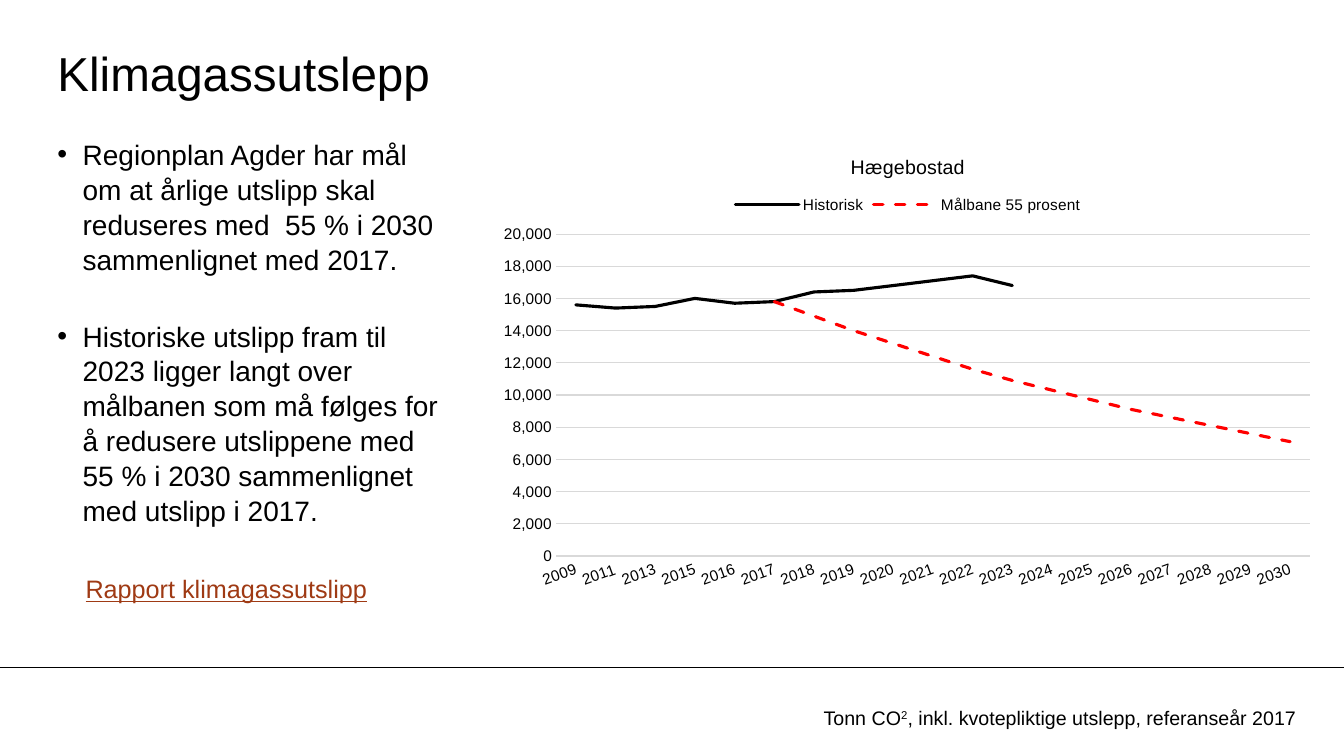
"""Build the slide on greenhouse gas emissions in Hægebostad."""
from dataclasses import dataclass

import pptx
import pptx.chart.data
import pptx.dml.color
import pptx.enum.chart
import pptx.enum.dml
import pptx.enum.shapes
import pptx.enum.text
import pptx.oxml
import pptx.oxml.ns
import pptx.util
from lxml import etree

Inches, Pt = pptx.util.Inches, pptx.util.Pt
RGB = pptx.dml.color.RGBColor.from_string
qn = pptx.oxml.ns.qn

TITLE = "Klimagassutslepp"
BULLETS = [
    "Regionplan Agder har mål om at årlige utslipp skal reduseres med  55 % i 2030 "
    "sammenlignet med 2017.",
    "Historiske utslipp fram til 2023 ligger langt over målbanen som må følges for å redusere "
    "utslippene med 55 % i 2030 sammenlignet med utslipp i 2017.",
]
REPORT = "Rapport klimagassutslipp"
UNIT_NOTE = [("Tonn CO", False), ("2", True),
             (", inkl. kvotepliktige utslepp, referanseår 2017", False)]

CHART_TITLE = "Hægebostad"
YEARS = [2009, 2011, 2013, *range(2015, 2031)]
HISTORY = {2009: 15600, 2011: 15400, 2013: 15500, 2015: 16000, 2016: 15700, 2017: 15800,
           2018: 16400, 2019: 16500, 2020: 16800, 2021: 17100, 2022: 17400, 2023: 16800}
TARGET = dict(zip(range(2017, 2031), [15800, 14900, 14000, 13200, 12400, 11600, 10900,
                                      10300, 9700, 9100, 8600, 8100, 7600, 7100]))

WIDTH, HEIGHT = 13.33, 7.5
LEFT, TOP, RIGHT = 0.57, 1.35, 13.16
CHART_LEFT = 4.85
RULE_Y = 6.62
PLOT_SHARES = {"x": 0.08, "y": 0.21, "w": 0.9, "h": 0.69}


@dataclass(frozen=True)
class Theme:
    font: str = "Arial"
    ink: str = "000000"
    link: str = "9F3A14"
    target: str = "FF0000"
    grid: str = "D9D9D9"
    title: int = 34
    body: int = 20
    report: int = 18
    note: int = 14
    axis: int = 11


THEME = Theme()


def style(font, size, color=THEME.ink):
    font.name, font.size, font.bold = THEME.font, Pt(size), False
    font.color.rgb = RGB(color)


def add_run(p, text, size, color=THEME.ink):
    r = p.add_run()
    r.text = text
    style(r.font, size, color)
    return r


def add_box(slide, left, top, width, height, inset=(0, 0)):
    s = slide.shapes.add_textbox(*map(Inches, (left, top, width, height)))
    tf = s.text_frame
    tf.word_wrap = True
    tf.margin_left = tf.margin_right = Inches(inset[0])
    tf.margin_top = tf.margin_bottom = Inches(inset[1])
    return tf


def add_bullets(tf):
    for i, text in enumerate(BULLETS):
        p = tf.add_paragraph() if i else tf.paragraphs[0]
        p.line_spacing = 1.04
        if i:
            p.space_before = Pt(30)
        pPr = p._p.get_or_add_pPr()
        pPr.set("marL", str(Inches(0.25)))
        pPr.set("indent", str(-Inches(0.25)))
        etree.SubElement(pPr, qn("a:buFont")).set("typeface", THEME.font)
        etree.SubElement(pPr, qn("a:buChar")).set("char", "•")
        add_run(p, text, THEME.body)


def set_plot_layout(chart):
    plot_area = chart._chartSpace.chart.plotArea
    for old in plot_area.findall(qn("c:layout")):
        plot_area.remove(old)
    layout = etree.Element(qn("c:layout"))
    manual = etree.SubElement(layout, qn("c:manualLayout"))
    settings = {"layoutTarget": "inner", "xMode": "edge", "yMode": "edge", **PLOT_SHARES}
    for tag, value in settings.items():
        etree.SubElement(manual, qn(f"c:{tag}")).set("val", str(value))
    plot_area.insert(0, layout)


def style_axis(axis, number_format):
    axis.major_tick_mark = axis.minor_tick_mark = pptx.enum.chart.XL_TICK_MARK.NONE
    axis.tick_labels.number_format = number_format
    axis.tick_labels.number_format_is_linked = False
    style(axis.tick_labels.font, THEME.axis)


def add_emission_chart(slide):
    data = pptx.chart.data.CategoryChartData()
    data.categories = [str(year) for year in YEARS]
    for name, values in (("Historisk", HISTORY), ("Målbane 55 prosent", TARGET)):
        data.add_series(name, [values.get(year) for year in YEARS])
    frame = slide.shapes.add_chart(
        pptx.enum.chart.XL_CHART_TYPE.LINE, Inches(CHART_LEFT), Inches(TOP),
        Inches(RIGHT - CHART_LEFT), Inches(4.63), data)
    chart = frame.chart
    style(chart.font, 10)

    chart.has_title = True
    add_run(chart.chart_title.text_frame.paragraphs[0], CHART_TITLE, THEME.note)
    chart.chart_title.include_in_layout = False
    chart.has_legend = True
    chart.legend.position = pptx.enum.chart.XL_LEGEND_POSITION.TOP
    chart.legend.include_in_layout = False
    style(chart.legend.font, THEME.axis)

    years, tonnes = chart.category_axis, chart.value_axis
    style_axis(years, "0")
    style_axis(tonnes, "#,##0")
    years._element.find(qn("c:txPr")).find(qn("a:bodyPr")).set("rot", "-1200000")
    tonnes.minimum_scale, tonnes.maximum_scale, tonnes.major_unit = 0, 20000, 2000
    tonnes.has_major_gridlines = True
    tonnes.format.line.fill.background()
    for line in (years.format.line, tonnes.major_gridlines.format.line):
        line.color.rgb = RGB(THEME.grid)
        line.width = Pt(0.75)

    chart.plots[0].vary_by_categories = False
    history, target = chart.plots[0].series
    for series, color in ((history, THEME.ink), (target, THEME.target)):
        series.smooth = False
        series.marker.style = pptx.enum.chart.XL_MARKER_STYLE.NONE
        series.format.line.color.rgb = RGB(color)
        series.format.line.width = Pt(2.25)
        series.format.line._get_or_add_ln().set("cap", "rnd")
    target.format.line.dash_style = pptx.enum.dml.MSO_LINE.DASH
    set_plot_layout(chart)


def main():
    prs = pptx.Presentation()
    prs.slide_width, prs.slide_height = Inches(WIDTH), Inches(HEIGHT)
    slide = prs.slides.add_slide(prs.slide_layouts[6])

    rule = slide.shapes.add_connector(
        pptx.enum.shapes.MSO_CONNECTOR.STRAIGHT, 0, Inches(RULE_Y),
        Inches(WIDTH), Inches(RULE_Y))
    rule.line.color.rgb = RGB(THEME.ink)
    rule.line.width = Pt(0.75)
    etree.SubElement(rule._element.spPr, qn("a:effectLst"))

    tf = add_box(slide, LEFT, 0.34, 11.1, 0.75)
    tf.vertical_anchor = pptx.enum.text.MSO_ANCHOR.MIDDLE
    add_run(tf.paragraphs[0], TITLE, THEME.title)

    add_bullets(add_box(slide, LEFT, TOP, 3.8, 3.7))

    tf = add_box(slide, 8.07, 6.95, RIGHT - 8.07, 0.34, (0.1, 0.05))
    for text, raised in UNIT_NOTE:
        r = add_run(tf.paragraphs[0], text, THEME.note)
        if raised:
            r._r.get_or_add_rPr().set("baseline", "30000")

    tf = add_box(slide, 0.75, 5.64, 3.16, 0.4, (0.1, 0.05))
    add_run(tf.paragraphs[0], REPORT, THEME.report, THEME.link).font.underline = True

    add_emission_chart(slide)
    prs.save("out.pptx")


if __name__ == "__main__":
    main()
